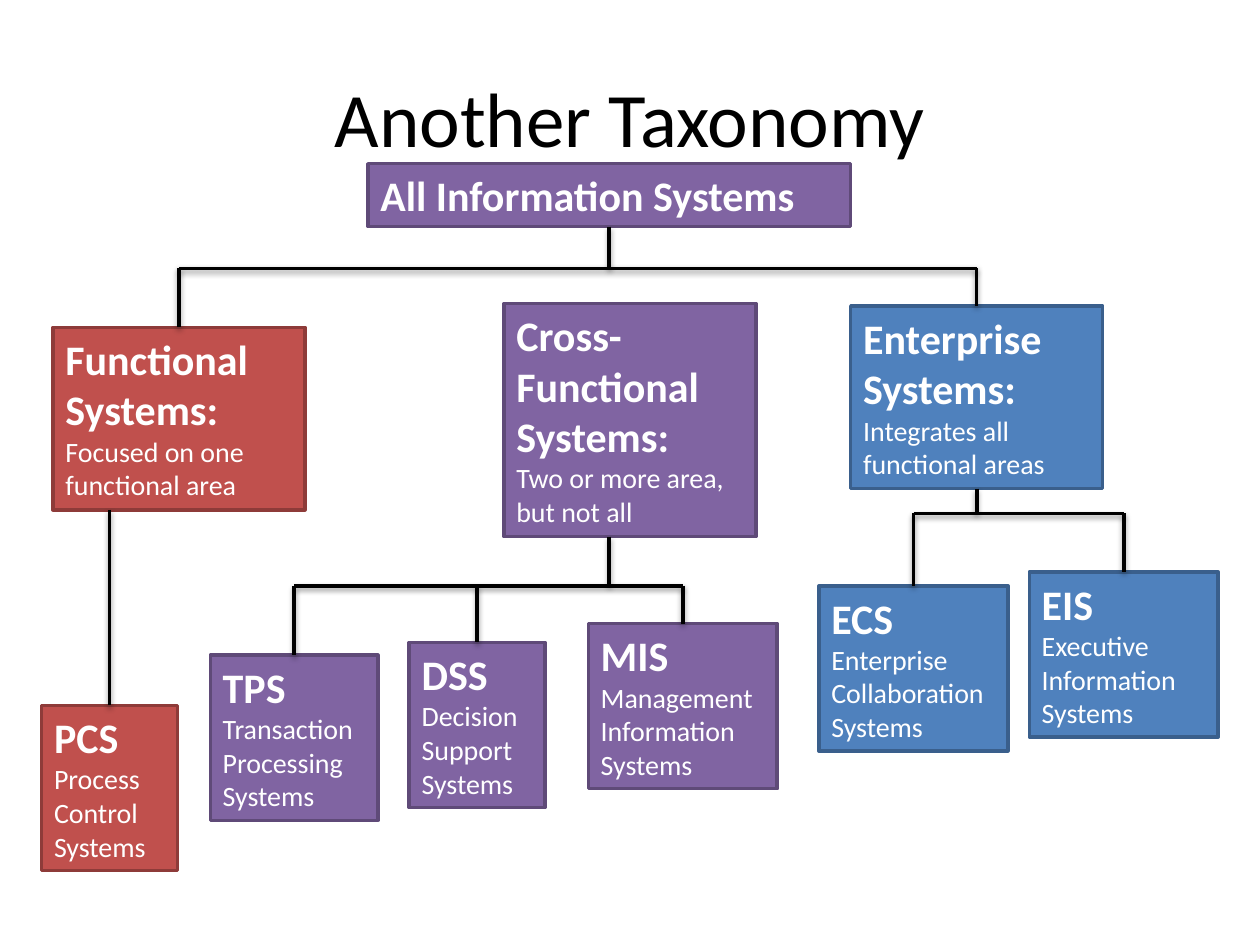
import pptx
import pptx.dml.color
import pptx.enum.shapes
import pptx.enum.text
import pptx.oxml
import pptx.oxml.ns
import pptx.util

Cm = pptx.util.Cm
Pt = pptx.util.Pt

COLOURS = {
    "ink": "000000",
    "paper": "FFFFFF",
    "purple": "8064A2",
    "purple edge": "5F4A78",
    "red": "C0504D",
    "red edge": "8E3B39",
    "blue": "4F81BD",
    "blue edge": "3A5F8C",
}

LINE_SHADOW = (
    f'<a:effectLst {pptx.oxml.ns.nsdecls("a")}>'
    f'<a:outerShdw blurRad="{Pt(3.1)}" dist="{Pt(1.6)}" dir="5400000" rotWithShape="0">'
    '<a:srgbClr val="000000"><a:alpha val="38000"/></a:srgbClr>'
    "</a:outerShdw></a:effectLst>"
)

# name: (colour, left, top, width, height, heading, detail paragraphs)
BOXES = {
    "all": ("purple", 7.42, 3.3, 9.73, 1.27, "All Information Systems", []),
    "functional": ("red", 1.07, 6.6, 5.08, 3.68, "Functional\nSystems:",
                   ["Focused on one\nfunctional area"]),
    "cross": ("purple", 10.16, 6.12, 5.08, 4.7, "Cross-Functional\nSystems:",
              ["Two or more area, but not all"]),
    "enterprise": ("blue", 17.15, 6.17, 5.08, 3.68, "Enterprise\nSystems:",
                   ["Integrates all\nfunctional areas"]),
    "pcs": ("red", 0.84, 14.22, 2.74, 3.33, "PCS", ["Process\nControl", "Systems"]),
    "tps": ("purple", 4.24, 13.21, 3.38, 3.33, "TPS",
            ["Transaction Processing", "Systems"]),
    "dss": ("purple", 8.25, 12.95, 2.74, 3.33, "DSS", ["Decision\nSupport", "Systems"]),
    "mis": ("purple", 11.86, 12.57, 3.81, 3.33, "MIS",
            ["Management\nInformation", "Systems"]),
    "ecs": ("blue", 16.51, 11.81, 3.81, 3.33, "ECS",
            ["Enterprise\nCollaboration", "Systems"]),
    "eis": ("blue", 20.75, 11.53, 3.81, 3.33, "EIS",
            ["Executive\nInformation", "Systems"]),
}

# parent, trunk x, height of the crossbar, children
BRANCHES = [
    ("all", 12.28, 5.41, ["functional", "enterprise"]),
    ("cross", 12.28, 11.81, ["tps", "dss", "mis"]),
    ("enterprise", 19.69, 10.35, ["ecs", "eis"]),
]


def colour(name):
    return pptx.dml.color.RGBColor.from_string(COLOURS[name])


class TaxonomySlide:
    font = "Calibri"
    heading_size, detail_size, title_size = 24, 16, 44
    line_width = 2

    def __init__(self, slide):
        self.slide = slide

    def set_text(self, para, text, size, ink, bold=False):
        para.text = text
        para.font.name = self.font
        para.font.size = Pt(size)
        para.font.bold = bold
        para.font.color.rgb = colour(ink)

    def title(self, text, left, top, width, height):
        box = self.slide.shapes.add_textbox(Cm(left), Cm(top), Cm(width), Cm(height))
        frame = box.text_frame
        frame.word_wrap = True
        frame.vertical_anchor = pptx.enum.text.MSO_ANCHOR.MIDDLE
        para = frame.paragraphs[0]
        para.alignment = pptx.enum.text.PP_ALIGN.CENTER
        self.set_text(para, text, self.title_size, "ink")

    def box(self, fill, left, top, width, height, heading, details):
        box = self.slide.shapes.add_shape(
            pptx.enum.shapes.MSO_SHAPE.RECTANGLE,
            Cm(left), Cm(top), Cm(width), Cm(height))
        box.shadow.inherit = False
        box.fill.solid()
        box.fill.fore_color.rgb = colour(fill)
        box.line.color.rgb = colour(f"{fill} edge")
        box.line.width = Pt(self.line_width)
        frame = box.text_frame
        frame.word_wrap = True
        frame.auto_size = pptx.enum.text.MSO_AUTO_SIZE.SHAPE_TO_FIT_TEXT
        frame.vertical_anchor = pptx.enum.text.MSO_ANCHOR.TOP
        self.set_text(frame.paragraphs[0], heading, self.heading_size, "paper", bold=True)
        for detail in details:
            self.set_text(frame.add_paragraph(), detail, self.detail_size, "paper")
        for para in frame.paragraphs:
            para.alignment = pptx.enum.text.PP_ALIGN.LEFT

    def line(self, x1, y1, x2, y2):
        line = self.slide.shapes.add_connector(
            pptx.enum.shapes.MSO_CONNECTOR.STRAIGHT, Cm(x1), Cm(y1), Cm(x2), Cm(y2))
        line.line.color.rgb = colour("ink")
        line.line.width = Pt(self.line_width)
        line._element.spPr.append(pptx.oxml.parse_xml(LINE_SHADOW))

    def branch(self, trunk_x, trunk_top, bar_y, drops):
        """Join a trunk to (x, y) drop ends through a horizontal crossbar."""
        self.line(trunk_x, trunk_top, trunk_x, bar_y)
        self.line(drops[0][0], bar_y, drops[-1][0], bar_y)
        for x, y in drops:
            self.line(x, bar_y, x, y)


def top_centre(name):
    _, left, top, width, *_ = BOXES[name]
    return left + width / 2, top


def bottom(name):
    _, _, top, _, height, *_ = BOXES[name]
    return top + height


def main():
    deck = pptx.Presentation()
    deck.slide_width, deck.slide_height = Cm(25.4), Cm(19.05)
    page = TaxonomySlide(deck.slides.add_slide(deck.slide_layouts[6]))

    page.title("Another Taxonomy", 1.27, 0.76, 22.86, 3.18)
    for box in BOXES.values():
        page.box(*box)
    for parent, trunk_x, bar_y, children in BRANCHES:
        page.branch(trunk_x, bottom(parent), bar_y, [top_centre(c) for c in children])
    pcs_x, pcs_top = top_centre("pcs")
    page.line(pcs_x, bottom("functional"), pcs_x, pcs_top)

    deck.save("out.pptx")


if __name__ == "__main__":
    main()
